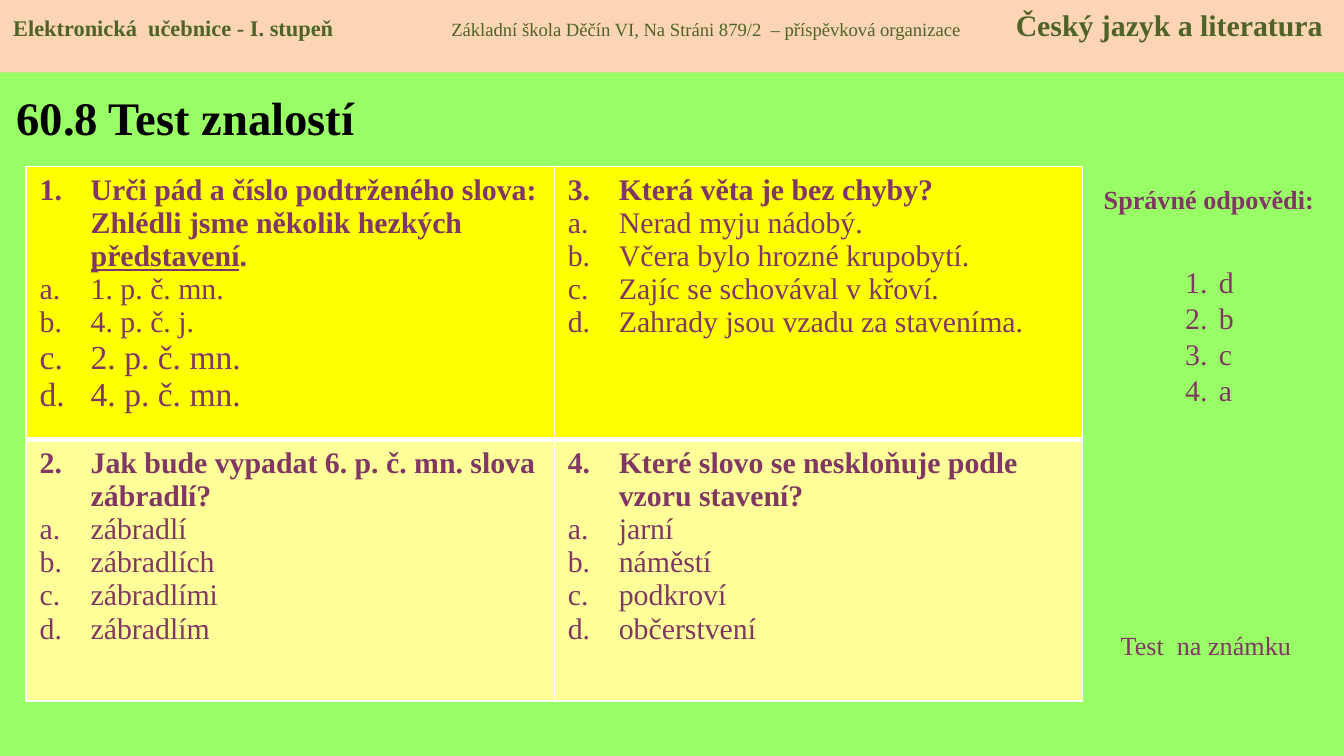
"""Build a Czech grammar quiz slide with a two-by-two question table."""
from copy import deepcopy
from dataclasses import dataclass

from lxml import etree
from pptx import Presentation
from pptx import util as u
from pptx.dml.color import RGBColor
from pptx.enum import shapes, text
from pptx.oxml import ns


@dataclass(frozen=True)
class Theme:
    """Colours, type sizes and slide measures."""
    font: str = "Times New Roman"
    page: str = "99FF66"
    bar: str = "FCD5B5"
    green: str = "4F6228"
    plum: str = "813763"
    black: str = "000000"
    line: str = "FFFFFF"
    rows: tuple = ("FFFF00", "FFFF99")
    title: float = 25
    large: float = 18
    body: float = 16
    label: float = 14
    note: float = 12
    small: float = 10
    wide: float = 10
    high: float = 10 * 9 / 16


T = Theme()

QUIZ = [
    [
        (1, [("Urči pád a číslo podtrženého slova:\vZhlédli jsme několik hezkých ", {}),
             ("představení", {"underline": True}), (".", {})],
         [("1. p. č. mn.", T.body), ("4. p. č. j.", T.body),
          ("2. p. č. mn.", T.large), ("4. p. č. mn.", T.large)]),
        (3, [("Která věta je bez chyby?", {})],
         [(t, T.body) for t in ("Nerad myju nádobý.", "Včera bylo hrozné krupobytí.",
                                "Zajíc se schovával v křoví.",
                                "Zahrady jsou vzadu za staveníma.")]),
    ],
    [
        (2, [("Jak bude vypadat 6. p. č. mn. slova zábradlí?", {})],
         [(t, T.body) for t in ("zábradlí", "zábradlích", "zábradlími", "zábradlím")]),
        (4, [("Které slovo se neskloňuje podle vzoru stavení?", {})],
         [(t, T.body) for t in ("jarní", "náměstí", "podkroví", "občerstvení")]),
    ],
]


def across(share):
    """Turn a percentage of the slide's width into a length."""
    return u.Inches(T.wide * share / 100)


def down(share):
    """Turn a percentage of the slide's height into a length."""
    return u.Inches(T.high * share / 100)


def area(x, y, w, h):
    """Turn four percentages into left, top, width and height."""
    return across(x), down(y), across(w), down(h)


def write(para, words, size, color=T.plum, **more):
    """Add formatted text, with line breaks at vertical tabs."""
    look = {"name": T.font, "size": u.Pt(size), "bold": False} | more
    for n, part in enumerate(words.split("\v")):
        if n:
            para.add_line_break()
            para._p[-1].append(deepcopy(run._r.rPr))
        run = para.add_run()
        run.text = part
        for key, value in look.items():
            setattr(run.font, key, value)
        run.font.color.rgb = RGBColor.from_string(color)


def number(para, kind, indent, start=1):
    """Number a paragraph with a hanging indent."""
    props = para._p.get_or_add_pPr()
    props.set("marL", str(u.Inches(indent)))
    props.set("indent", str(-u.Inches(indent)))
    mark = etree.SubElement(props, ns.qn("a:buAutoNum"), type=kind)
    if start > 1:
        mark.set("startAt", str(start))


def box(slide, place, **format):
    """Add a wrapping text box and return its frame."""
    frame = slide.shapes.add_textbox(*place).text_frame
    for key, value in ({"word_wrap": True} | format).items():
        setattr(frame, key, value)
    return frame


def paras(frame, count):
    """Return the given number of paragraphs of a fresh frame."""
    return [frame.paragraphs[0]] + [frame.add_paragraph() for _ in range(count - 1)]


def banner(slide):
    """Draw the top bar with three tabbed captions."""
    bar = slide.shapes.add_shape(shapes.MSO_SHAPE.RECTANGLE, *area(0, 0, 100, 9.6))
    bar.shadow.inherit = False
    bar.fill.solid()
    bar.fill.fore_color.rgb = RGBColor.from_string(T.bar)
    bar.line.fill.background()
    bar.text_frame.vertical_anchor = text.MSO_ANCHOR.TOP
    para = bar.text_frame.paragraphs[0]
    para.alignment = text.PP_ALIGN.LEFT
    stops = etree.SubElement(para._p.get_or_add_pPr(), ns.qn("a:tabLst"))
    for share in (32.6, 74.6):
        etree.SubElement(stops, ns.qn("a:tab"), pos=str(across(share)), algn="l")
    write(para, "Elektronická  učebnice - I. stupeň\t", T.note, T.green, bold=True)
    write(para, "Základní škola Děčín VI, Na Stráni 879/2  – příspěvková organizace\t",
          T.small, T.green)
    write(para, "Český jazyk a literatura", T.body, T.green, bold=True)


def border(cell, widths):
    """Draw the four sides of a cell in the given point widths."""
    props = cell._tc.get_or_add_tcPr()
    for n, (side, width) in enumerate(widths.items()):
        edge = etree.Element(ns.qn(f"a:ln{side}"), w=str(u.Pt(width)))
        fill = etree.SubElement(edge, ns.qn("a:solidFill"))
        etree.SubElement(fill, ns.qn("a:srgbClr"), val=T.line)
        props.insert(n, edge)


def ask(cell, start, query, picks):
    """Write a numbered question and its lettered choices."""
    head, *rest = paras(cell.text_frame, 1 + len(picks))
    number(head, "arabicPeriod", 0.38, start)
    for words, look in query:
        write(head, words, T.body, bold=True, **look)
    for para, (words, size) in zip(rest, picks):
        number(para, "alphaLcPeriod", 0.38)
        write(para, words, size)


def quiz(slide):
    """Lay out the question table."""
    table = slide.shapes.add_table(2, 2, *area(1.95, 22.05, 78.6, 70.6)).table
    table.first_row = table.horz_banding = False
    for col in table.columns:
        col.width = across(39.3)
    for r, (row, share) in enumerate(zip(table.rows, (36.1, 34.5))):
        row.height = down(share)
        for cell, item in zip(row.cells, QUIZ[r]):
            cell.fill.solid()
            cell.fill.fore_color.rgb = RGBColor.from_string(T.rows[r])
            border(cell, {"L": 1, "R": 1, "T": 1 if r == 0 else 3, "B": 3 if r == 0 else 1})
            ask(cell, *item)


def answers(slide):
    """Write the answer key and the closing label."""
    head = box(slide, area(80.5, 23.4, 18.9, 6)).paragraphs[0]
    head.alignment = text.PP_ALIGN.CENTER
    write(head, "Správné odpovědi:", T.label, bold=True)
    frame = box(slide, area(87.2, 29.4, 5.5, 35.4), margin_top=u.Inches(0.31))
    for para, letter in zip(paras(frame, 4), "dbca"):
        number(para, "arabicPeriod", 0.25)
        write(para, letter, T.body)
    write(box(slide, area(82.4, 82.4, 15.7, 6)).paragraphs[0], "Test  na známku", T.label)


def main():
    """Assemble and save the slide."""
    deck = Presentation()
    deck.slide_width, deck.slide_height = across(100), down(100)
    slide = deck.slides.add_slide(deck.slide_layouts[6])
    slide.background.fill.solid()
    slide.background.fill.fore_color.rgb = RGBColor.from_string(T.page)
    title = box(slide, area(0.25, 9.7, 31.9, 11.6), vertical_anchor=text.MSO_ANCHOR.MIDDLE)
    write(title.paragraphs[0], "60.8 Test znalostí", T.title, T.black, bold=True)
    quiz(slide)
    answers(slide)
    banner(slide)
    deck.save("out.pptx")


if __name__ == "__main__":
    main()
